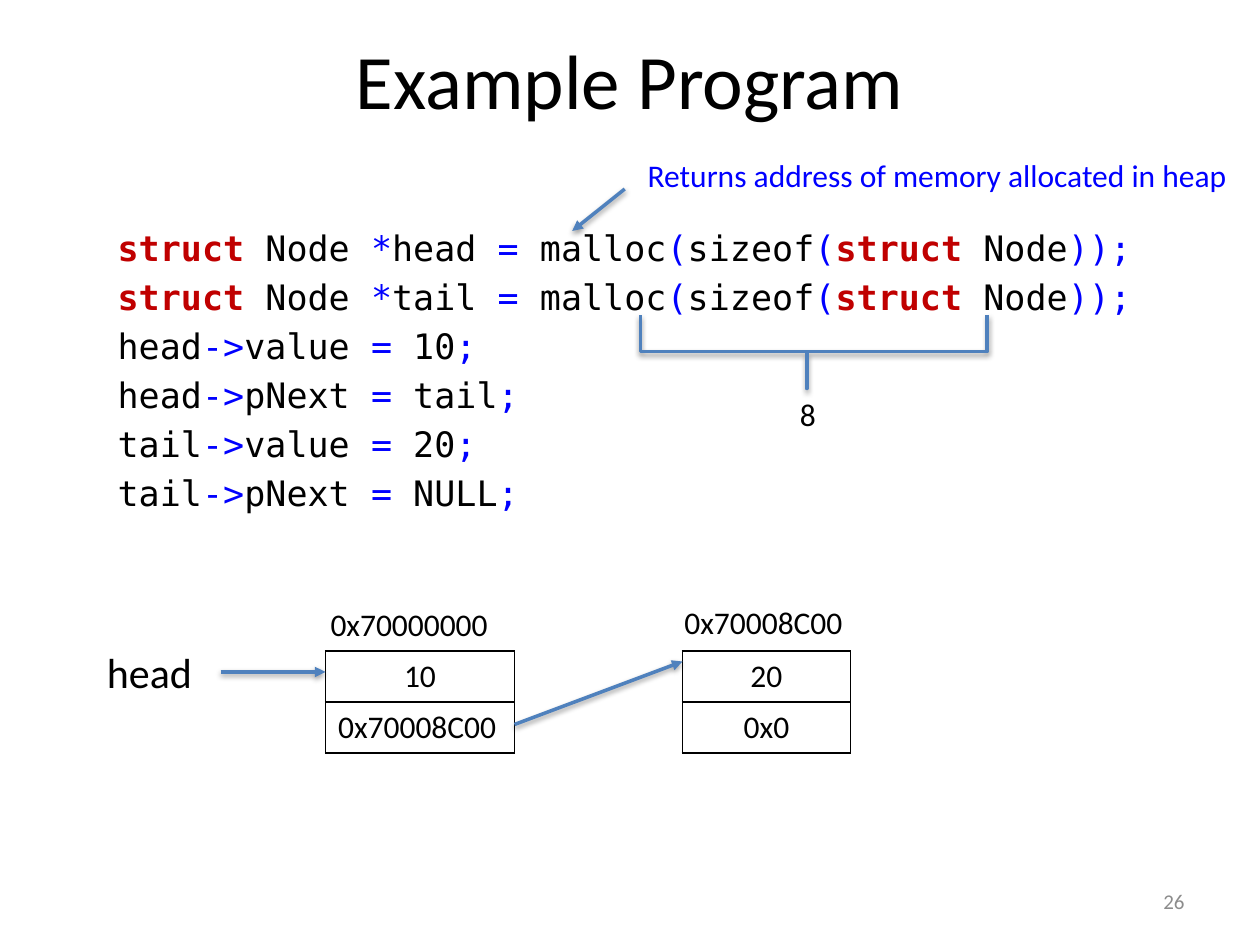
from itertools import groupby

from lxml import etree
from pptx import Presentation
from pptx.dml.color import RGBColor
from pptx.enum.shapes import MSO_CONNECTOR, MSO_SHAPE
from pptx.enum.text import MSO_ANCHOR, MSO_AUTO_SIZE, PP_ALIGN
from pptx.oxml.ns import qn
from pptx.util import Inches, Pt

STRAIGHT = MSO_CONNECTOR.STRAIGHT
BRACE = MSO_SHAPE.RIGHT_BRACE
MIDDLE = MSO_ANCHOR.MIDDLE
FIT = MSO_AUTO_SIZE.SHAPE_TO_FIT_TEXT
LEFT, CENTER, RIGHT = PP_ALIGN.LEFT, PP_ALIGN.CENTER, PP_ALIGN.RIGHT

COLORS = {"text": "000000", "keyword": "C00000", "operator": "0000FF",
          "line": "4F81BD", "number": "8C8C8C"}
KEYWORD = "struct"
OPERATORS = "*=()->;"


def grid(*units):
    """Convert counts of grid cells, twelve to the inch, into lengths."""
    return [Inches(unit / 12) for unit in units]


def write(para, text, size=18, color="text", font="Calibri", bold=False, align=LEFT):
    span = para.add_run()
    span.text = text
    span.font.name = font
    span.font.size = Pt(size)
    span.font.bold = bold
    span.font.color.rgb = RGBColor.from_string(COLORS[color])
    para.alignment = align


deck = Presentation()
deck.slide_width, deck.slide_height = grid(120, 90)
page = deck.slides.add_slide(deck.slide_layouts[1])

# Title
title = page.shapes.title
title.left, title.top, title.width, title.height = grid(6, 0, 108, 15)
write(title.text_frame.paragraphs[0], "Example Program", size=44, align=CENTER)

# Program code, coloured by token
code = page.placeholders[1]
code.left, code.top, code.width, code.height = grid(6, 21, 108, 59.4)
lines = [
    "struct Node *head = malloc(sizeof(struct Node));",
    "struct Node *tail = malloc(sizeof(struct Node));",
    "head->value = 10;",
    "head->pNext = tail;",
    "tail->value = 20;",
    "tail->pNext = NULL;",
]
for number, line in enumerate(lines):
    frame = code.text_frame
    para = frame.add_paragraph() if number else frame.paragraphs[0]
    properties = para._p.get_or_add_pPr()
    properties.set("marL", str(grid(4)[0]))
    properties.set("indent", "0")
    etree.SubElement(properties, qn("a:buNone"))
    for is_operator, letters in groupby(line, lambda letter: letter in OPERATORS):
        token = "".join(letters)
        if token.startswith(KEYWORD):
            write(para, KEYWORD, size=20, color="keyword", font="DejaVu Sans Mono", bold=True)
            token = token.removeprefix(KEYWORD)
        write(para, token, size=20, color="operator" if is_operator else "text",
              font="DejaVu Sans Mono")

# List nodes: a value above the address of the next node
nodes = [
    (31, 18, [("10", CENTER), ("0x70008C00", LEFT)]),
    (65, 16, [("20", CENTER), ("0x0", CENTER)]),
]
for left, width, fields in nodes:
    table = page.shapes.add_table(len(fields), 1, *grid(left, 62, width, 9.72)).table
    table.first_row = table.horz_banding = False
    for row, (value, align) in enumerate(fields):
        cell = table.cell(row, 0)
        write(cell.text_frame.paragraphs[0], value, align=align)
        properties = cell._tc.get_or_add_tcPr()
        for side in ("lnL", "lnR", "lnT", "lnB"):
            border = etree.SubElement(properties, qn(f"a:{side}"), w=str(Pt(1)))
            fill = etree.SubElement(border, qn("a:solidFill"))
            etree.SubElement(fill, qn("a:srgbClr"), val=COLORS["text"])
        cell.fill.background()

# Labels
labels = [
    ("head", (9, 61, 10.7, 6), {"size": 24}),
    ("0x70000000", (30.3, 57, 17.5, 4.8), {}),
    ("0x70008C00", (64, 56.8, 17.6, 4.8), {}),
    ("8", (75, 37, 4, 4.8), {}),
    ("Returns address of memory allocated in heap", (60.5, 14.3, 58.2, 4.8),
     {"color": "operator"}),
]
for text, place, style in labels:
    box = page.shapes.add_textbox(*grid(*place))
    box.text_frame.word_wrap = False
    box.text_frame.auto_size = FIT
    write(box.text_frame.paragraphs[0], text, **style)

# Arrows keep the soft shadow of the theme
arrows = [
    (21, 64, 31, 64),
    (49, 69, 65, 63),
    (59.5, 18, 54.5, 22),
]
for ends in arrows:
    arrow = page.shapes.add_connector(STRAIGHT, *grid(*ends))
    arrow.line.width = Pt(2)
    arrow.line.color.rgb = RGBColor.from_string(COLORS["line"])
    etree.SubElement(arrow.line._get_or_add_ln(), qn("a:tailEnd"), type="triangle")

# Bracket under the sizeof expression, with the same shadow as the arrows
brace = page.shapes.add_shape(BRACE, *grid(74, 17, 7, 33))
brace.rotation = 90
brace.adjustments[0], brace.adjustments[1] = 0, 0.52
brace.fill.background()
brace.line.width = Pt(2)
brace.line.color.rgb = RGBColor.from_string(COLORS["line"])
brace._element.find(".//" + qn("a:effectRef")).set("idx", "1")

# Page number
box = page.shapes.add_textbox(*grid(86, 83.4, 28, 4.8))
box.text_frame.word_wrap = True
box.text_frame.vertical_anchor = MIDDLE
write(box.text_frame.paragraphs[0], "26", size=12, color="number", align=RIGHT)

deck.save("out.pptx")
